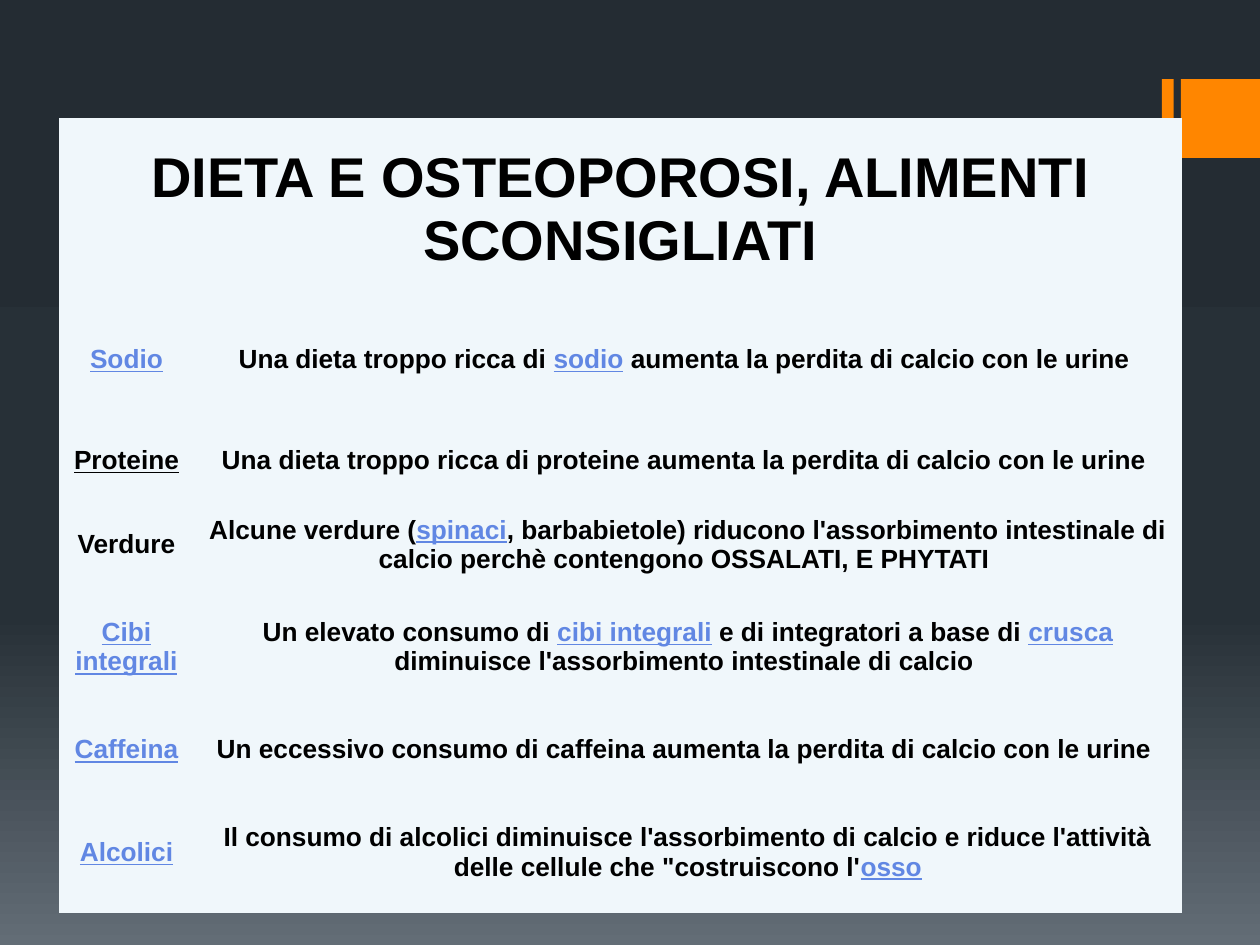
from copy import deepcopy
from itertools import cycle

from pptx import Presentation
from pptx.dml.color import RGBColor
from pptx.enum.shapes import MSO_SHAPE as Shape
from pptx.enum.text import MSO_ANCHOR as Anchor, PP_ALIGN as Align
from pptx.oxml.ns import qn
from pptx.util import Pt

ORANGE = RGBColor(0xFF, 0x86, 0x00)
PALE_BLUE = RGBColor(0xF0, 0xF7, 0xFB)
BLACK = RGBColor(0x00, 0x00, 0x00)
LINK_BLUE = RGBColor(0x61, 0x87, 0xE3)
SKY = [
    (0, RGBColor(0x24, 0x2C, 0x33)),
    (0.65, RGBColor(0x27, 0x30, 0x37)),
    (1, RGBColor(0x63, 0x6D, 0x76)),
]

PLAIN = (BLACK, False)
UNDERLINED = (BLACK, True)
LINK = (LINK_BLUE, True)

NO_GRID_STYLE = "{2D5ABB26-0587-4C30-8999-92F81FD0307C}"
COLUMN_WIDTHS = [77, 564.5]
HEADING = "DIETA E OSTEOPOROSI, ALIMENTI SCONSIGLIATI"
HEADING_HEIGHT = 104.4
FOODS = [
    (67, "Sodio", LINK,
     "Una dieta troppo ricca di *sodio* aumenta la perdita di calcio con le urine "),
    (48.2, "Proteine", UNDERLINED,
     "Una dieta troppo ricca di proteine aumenta la perdita di calcio con le urine "),
    (48.2, "Verdure", PLAIN,
     "Alcune verdure (*spinaci*, barbabietole) riducono l'assorbimento intestinale "
     "di calcio perchè contengono OSSALATI, E PHYTATI "),
    (69.1, "Cibi integrali", LINK,
     "Un elevato consumo di *cibi integrali* e di integratori a base di *crusca* "
     "diminuisce l'assorbimento intestinale di calcio "),
    (48.2, "Caffeina", LINK,
     "Un eccessivo consumo di caffeina aumenta la perdita di calcio con le urine "),
    (69.1, "Alcolici", LINK,
     "Il consumo di alcolici diminuisce l'assorbimento di calcio e riduce l'attività "
     "delle cellule che \"costruiscono l'*osso*"),
]


def paint_background(slide):
    """Fill the slide with the vertical dark gradient."""
    fill = slide.background.fill
    fill.gradient()
    fill.gradient_angle = 270
    stop_list = next(slide.element.iter(qn("a:gsLst")))
    stop_list.append(deepcopy(stop_list[-1]))
    for stop, (position, color) in zip(fill.gradient_stops, SKY):
        stop.position = position
        stop.color.rgb = color


def add_accent(slide, left, width):
    """Add one orange block of the corner accent."""
    accent = slide.shapes.add_shape(
        Shape.RECTANGLE, Pt(left), Pt(45.2), Pt(width), Pt(45))
    accent.shadow.inherit = False
    accent.fill.solid()
    accent.fill.fore_color.rgb = ORANGE
    accent.line.fill.background()


def split_links(text):
    """Pair each part of the text with its style; starred parts are links."""
    return [(part, style) for part, style in zip(text.split("*"), cycle([PLAIN, LINK]))
            if part]


def write_cell(cell, parts, size):
    """Fill a table cell with centred bold text."""
    cell.fill.solid()
    cell.fill.fore_color.rgb = PALE_BLUE
    cell.vertical_anchor = Anchor.MIDDLE
    paragraph = cell.text_frame.paragraphs[0]
    paragraph.alignment = Align.CENTER
    for text, (color, underline) in parts:
        run = paragraph.add_run()
        run.text = text
        formats = {"name": "Arial", "size": Pt(size), "bold": True,
                   "underline": underline}
        for attribute, value in formats.items():
            setattr(run.font, attribute, value)
        run.font.color.rgb = color


def add_food_table(slide):
    """Add the table of discouraged foods under its merged heading."""
    heights = [HEADING_HEIGHT] + [food[0] for food in FOODS]
    frame = slide.shapes.add_table(
        len(heights), len(COLUMN_WIDTHS), Pt(33.8), Pt(67.5),
        Pt(sum(COLUMN_WIDTHS)), Pt(sum(heights)))
    table = frame.table
    next(frame.element.iter(qn("a:tableStyleId"))).text = NO_GRID_STYLE
    table.first_row = table.horz_banding = False
    for column, width in zip(table.columns, COLUMN_WIDTHS):
        column.width = Pt(width)
    for row, height in zip(table.rows, heights):
        row.height = Pt(height)
    table.cell(0, 0).merge(table.cell(0, 1))
    write_cell(table.cell(0, 0), [(HEADING, PLAIN)], 32)
    for index, (_, food, style, effect) in enumerate(FOODS, start=1):
        write_cell(table.cell(index, 0), [(food, style)], 15)
        write_cell(table.cell(index, 1), split_links(effect), 15)


def main():
    """Build the slide and save it."""
    deck = Presentation()
    deck.slide_width, deck.slide_height = Pt(720), Pt(540)
    slide = deck.slides.add_slide(deck.slide_layouts[6])
    paint_background(slide)
    add_accent(slide, 664, 6.7)
    add_accent(slide, 674.8, 45.2)
    add_food_table(slide)
    deck.save("out.pptx")


if __name__ == "__main__":
    main()
